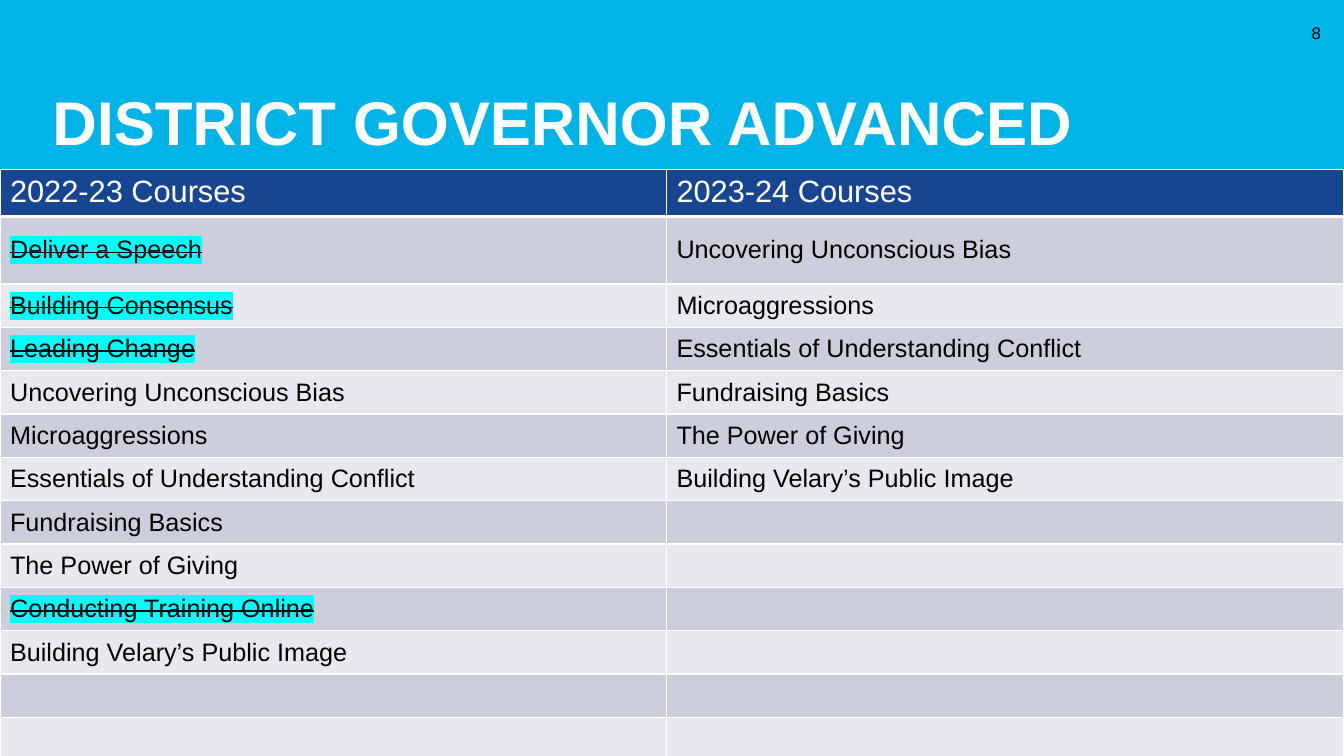
import itertools

import pptx
import pptx.dml.color
import pptx.enum.shapes
import pptx.enum.text
import pptx.oxml
import pptx.oxml.ns
import pptx.util
from pptx.util import Inches

ANCHOR = pptx.enum.text.MSO_ANCHOR
ALIGN = pptx.enum.text.PP_ALIGN
NAMESPACE = pptx.oxml.ns.nsdecls("a")

SKY, NAVY, WHITE, BLACK = "01B4E7", "17458F", "FFFFFF", "000000"
DARK_BAND, LIGHT_BAND, MARKER = "CCCFDB", "E8E9EE", "00FFFF"

HEADINGS = ("2022-23 Courses", "2023-24 Courses")
COURSES_2022 = [
    "Deliver a Speech",
    "Building Consensus",
    "Leading Change",
    "Uncovering Unconscious Bias",
    "Microaggressions",
    "Essentials of Understanding Conflict",
    "Fundraising Basics",
    "The Power of Giving",
    "Conducting Training Online",
    "Building Velary’s Public Image",
]
DROPPED = {"Deliver a Speech", "Building Consensus", "Leading Change",
           "Conducting Training Online"}
COURSES_2023 = [course for course in COURSES_2022 if course not in DROPPED]
EMPTY_ROWS = 2


def color(value):
    return pptx.dml.color.RGBColor.from_string(value)


class CourseSlide:
    """Holds the style and the current slide."""

    font = "Arial"

    def __init__(self, deck):
        self.page = deck.slides.add_slide(deck.slide_layouts[6])

    def span(self, para, text, size, ink, bold=None, dropped=False):
        span = para.add_run()
        span.text = text
        span.font.name = self.font
        span.font.size = pptx.util.Pt(size)
        span.font.color.rgb = color(ink)
        span.font.bold = bold
        if dropped:
            properties = span.font._element
            properties.set("strike", "sngStrike")
            fill = properties.find(pptx.oxml.ns.qn("a:solidFill"))
            fill.addnext(pptx.oxml.parse_xml(
                f'<a:highlight {NAMESPACE}><a:srgbClr val="{MARKER}"/></a:highlight>'))

    def band(self, left, top, width, height, fill):
        band = self.page.shapes.add_shape(
            pptx.enum.shapes.MSO_SHAPE.RECTANGLE,
            Inches(left), Inches(top), Inches(width), Inches(height))
        band.shadow.inherit = False
        band.fill.solid()
        band.fill.fore_color.rgb = color(fill)
        band.line.fill.background()

    def text(self, left, top, width, height, text, size, ink, anchor,
             align=ALIGN.LEFT, bold=None, spacing=None, top_inset=0.05, bottom_inset=0.05):
        box = self.page.shapes.add_textbox(
            Inches(left), Inches(top), Inches(width), Inches(height))
        frame = box.text_frame
        frame.word_wrap = True
        frame.vertical_anchor = anchor
        frame.margin_top = Inches(top_inset)
        frame.margin_bottom = Inches(bottom_inset)
        para = frame.paragraphs[0]
        para.alignment = align
        para.line_spacing = spacing
        self.span(para, text, size, ink, bold)

    def cell(self, cell, fill, bottom_width=1):
        cell.fill.solid()
        cell.fill.fore_color.rgb = color(fill)
        properties = cell._tc.get_or_add_tcPr()
        for place, side in enumerate("LRTB"):
            width = pptx.util.Pt(bottom_width if side == "B" else 1)
            properties.insert(place, pptx.oxml.parse_xml(
                f'<a:ln{side} {NAMESPACE} w="{width}"><a:solidFill>'
                f'<a:srgbClr val="{WHITE}"/></a:solidFill></a:ln{side}>'))

    def table(self, left, top, widths, heights, headings, rows):
        table = self.page.shapes.add_table(
            len(heights), len(widths), Inches(left), Inches(top),
            Inches(sum(widths)), Inches(sum(heights))).table
        for column, width in zip(table.columns, widths):
            column.width = Inches(width)
        for row, height in zip(table.rows, heights):
            row.height = Inches(height)

        # Header row
        for cell, heading in zip(table.rows[0].cells, headings):
            self.cell(cell, NAVY, bottom_width=3)
            self.span(cell.text_frame.paragraphs[0], heading, 22, WHITE)

        # Banded course rows
        for number, courses in enumerate(rows, start=1):
            for cell, course in zip(table.rows[number].cells, courses):
                self.cell(cell, DARK_BAND if number % 2 else LIGHT_BAND)
                cell.vertical_anchor = ANCHOR.MIDDLE
                if course:
                    self.span(cell.text_frame.paragraphs[0], course, 18, BLACK,
                              dropped=course in DROPPED)


def main():
    deck = pptx.Presentation()
    deck.slide_width, deck.slide_height = Inches(13.33), Inches(7.5)
    slide = CourseSlide(deck)

    # Title band and page number
    slide.band(0, 0, 13.33, 1.68, SKY)
    slide.text(0.42, 0, 12.58, 1.68, "DISTRICT GOVERNOR ADVANCED", 44, WHITE,
               ANCHOR.BOTTOM, bold=True, spacing=0.9, top_inset=0, bottom_inset=0.1)
    slide.text(12.74, 0.13, 0.46, 0.4, "8", 12, BLACK, ANCHOR.MIDDLE, ALIGN.RIGHT)

    # Course table
    rows = list(itertools.zip_longest(COURSES_2022, COURSES_2023, fillvalue=""))
    rows += [("", "")] * EMPTY_ROWS
    heights = [0.43, 0.67] + [0.43] * (len(rows) - 1)
    slide.table(0, 1.68, (6.61, 6.72), heights, HEADINGS, rows)

    deck.save("out.pptx")


if __name__ == "__main__":
    main()
